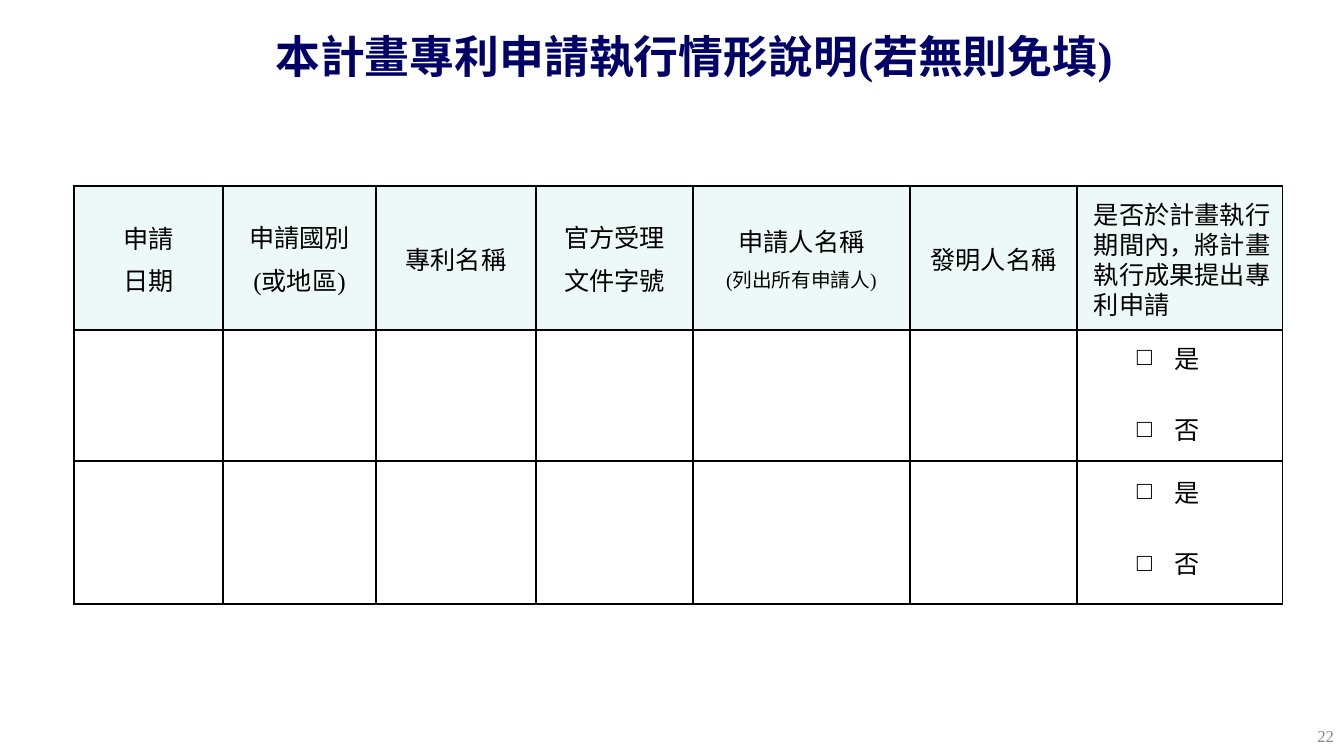
from dataclasses import dataclass

from lxml import etree
from pptx import Presentation
from pptx.dml.color import RGBColor
from pptx.enum.text import MSO_ANCHOR, PP_ALIGN
from pptx.oxml.ns import qn
from pptx.util import Emu, Pt

LEFT, CENTER, RIGHT = PP_ALIGN.LEFT, PP_ALIGN.CENTER, PP_ALIGN.RIGHT
TOP, MIDDLE = MSO_ANCHOR.TOP, MSO_ANCHOR.MIDDLE
FONT = "Times New Roman"
BLACK, NAVY, GRAY, MINT = "000000", "000066", "898989", "ECF9F8"
BORDER_SIDES = ("a:lnL", "a:lnR", "a:lnT", "a:lnB")
ROW_HEIGHTS = (144, 131, 143)
CHOICES = ("是", "否")
CHOICE_TOP_MARGINS = (9, 12)


@dataclass
class Line:
    text: str
    size: int = 18


@dataclass
class Column:
    width: int
    lines: tuple[Line, ...] = ()
    anchor: MSO_ANCHOR = MIDDLE
    top_margin: int = 0


@dataclass
class Label:
    text: str
    left: int
    top: int
    width: int
    height: int
    size: int
    color: str
    align: PP_ALIGN
    anchor: MSO_ANCHOR
    bold: bool = False


COLUMNS = (
    Column(149, (Line("申請"), Line("日期")), TOP, 33),
    Column(153, (Line("申請國別"), Line("(或地區)"))),
    Column(160, (Line("專利名稱"),)),
    Column(157, (Line("官方受理"), Line("文件字號"))),
    Column(217, (Line("申請人名稱"), Line("(列出所有申請人)", 14))),
    Column(167, (Line("發明人名稱"),)),
    Column(206),
)

LABELS = (
    Label("22", 1030, 716, 314, 40, 12, GRAY, RIGHT, MIDDLE),
    Label("本計畫專利申請執行情形說明(若無則免填)", 89, 16, 1210, 80, 32, NAVY, CENTER, MIDDLE, True),
    Label("是否於計畫執行期間內，將計畫執行成果提出專利申請", 1084, 194, 206, 132, 18, BLACK, LEFT, TOP),
)


def px(count: int) -> Emu:
    return Emu(round(count * 914400 / 100.8))


def rgb(color: str) -> RGBColor:
    return RGBColor.from_string(color)


def write(para, text: str, *, size: int = 18, color: str = BLACK, bold: bool = False,
          align: PP_ALIGN = CENTER, before: int = 0) -> None:
    para.alignment = align
    if before:
        para.space_before = Pt(before)
    span = para.add_run()
    span.text = text
    span.font.name = FONT
    span.font.size = Pt(size)
    span.font.bold = bold
    span.font.color.rgb = rgb(color)


def add_checkbox(para) -> None:
    properties = para._p.get_or_add_pPr()
    properties.set("marL", "0")
    properties.set("indent", str(-px(38)))
    etree.SubElement(properties, qn("a:buFont"), typeface=FONT)
    etree.SubElement(properties, qn("a:buChar"), char="□")
    tabs = etree.SubElement(properties, qn("a:tabLst"))
    etree.SubElement(tabs, qn("a:tab"), pos=str(px(25)), algn="l")


def paragraph_at(frame, index: int):
    return frame.add_paragraph() if index else frame.paragraphs[0]


def style_cell(cell, anchor: MSO_ANCHOR, top_margin: int, fill: str | None = None) -> None:
    cell.margin_left = cell.margin_right = px(2)
    cell.margin_top, cell.margin_bottom = px(top_margin), 0
    cell.vertical_anchor = anchor
    properties = cell._tc.get_or_add_tcPr()
    for side in BORDER_SIDES:
        line = etree.SubElement(properties, qn(side), w=str(Pt(1)))
        solid = etree.SubElement(line, qn("a:solidFill"))
        etree.SubElement(solid, qn("a:srgbClr"), val=BLACK)
    if fill:
        cell.fill.solid()
        cell.fill.fore_color.rgb = rgb(fill)
    else:
        cell.fill.background()


def add_patent_table(page) -> None:
    width = sum(column.width for column in COLUMNS)
    frame = page.shapes.add_table(len(ROW_HEIGHTS), len(COLUMNS), px(74), px(186),
                                  px(width), px(sum(ROW_HEIGHTS)))
    table = frame.table
    table.first_row = table.horz_banding = False
    for row, height in zip(table.rows, ROW_HEIGHTS):
        row.height = px(height)
    for number, column in enumerate(COLUMNS):
        table.columns[number].width = px(column.width)
        header = table.cell(0, number)
        style_cell(header, column.anchor, column.top_margin, MINT)
        for index, line in enumerate(column.lines):
            write(paragraph_at(header.text_frame, index), line.text,
                  size=line.size, before=4 if index else 0)
        for row_number, top_margin in enumerate(CHOICE_TOP_MARGINS, start=1):
            style_cell(table.cell(row_number, number), TOP, top_margin)
    for row_number in range(1, len(ROW_HEIGHTS)):
        answer = table.cell(row_number, len(COLUMNS) - 1)
        for index, choice in enumerate(CHOICES):
            para = paragraph_at(answer.text_frame, index)
            if index:
                para.space_before = Pt(25)
            add_checkbox(para)
            write(para, choice)


def add_label(page, label: Label) -> None:
    box = page.shapes.add_textbox(px(label.left), px(label.top), px(label.width), px(label.height))
    frame = box.text_frame
    frame.word_wrap = True
    frame.vertical_anchor = label.anchor
    write(frame.paragraphs[0], label.text, size=label.size, color=label.color,
          bold=label.bold, align=label.align)


def main() -> None:
    deck = Presentation()
    deck.slide_width, deck.slide_height = px(1344), px(756)
    page = deck.slides.add_slide(deck.slide_layouts[6])
    add_patent_table(page)
    for label in LABELS:
        add_label(page, label)
    deck.save("out.pptx")


if __name__ == "__main__":
    main()
